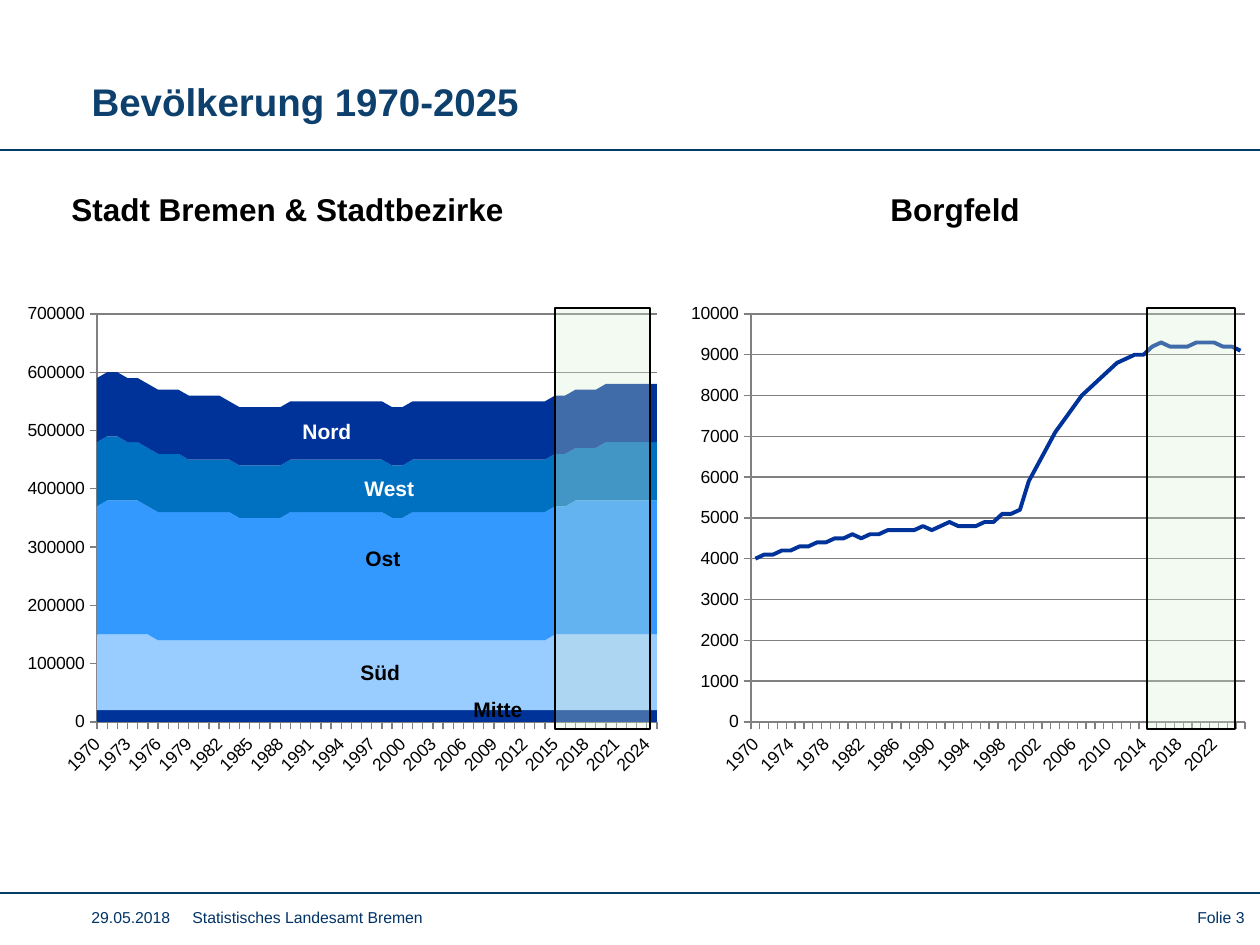
from lxml import etree
from pptx import Presentation
from pptx.chart.data import CategoryChartData
from pptx.dml.color import RGBColor
from pptx.enum.chart import XL_CHART_TYPE, XL_TICK_MARK
from pptx.enum.shapes import MSO_CONNECTOR, MSO_SHAPE
from pptx.enum.text import MSO_ANCHOR, PP_ALIGN
from pptx.oxml.ns import qn
from pptx.util import Pt

AREA, LINE = XL_CHART_TYPE.AREA_STACKED, XL_CHART_TYPE.LINE
TICK_OUT = XL_TICK_MARK.OUTSIDE
STRAIGHT, RECT = MSO_CONNECTOR.STRAIGHT, MSO_SHAPE.RECTANGLE
MIDDLE, LEFT, RIGHT = MSO_ANCHOR.MIDDLE, PP_ALIGN.LEFT, PP_ALIGN.RIGHT

SCALE = 914400 / 126  # EMU per px
FONT = "Arial"
COLORS = {
    "title": "0D406D", "rule": "003D66", "footer": "003366",
    "black": "000000", "white": "FFFFFF", "grid": "808080",
    "navy": "003399", "blue": "0070C0", "sky": "3399FF", "pale": "99CCFF",
    "forecast": "D8F0D2",
}
YEARS = [str(y) for y in range(1970, 2026)]

# Districts from bottom to top: colour, (thousand inhabitants, number of years)
DISTRICTS = [
    ("Mitte", "navy", [(20, 56)]),
    ("Süd", "pale", [(130, 6), (120, 39), (130, 11)]),
    ("Ost", "sky", [(220, 1), (230, 4), (220, 9), (210, 5), (220, 10),
                    (210, 2), (220, 16), (230, 9)]),
    ("West", "blue", [(110, 3), (100, 6), (90, 41), (100, 6)]),
    ("Nord", "navy", [(110, 13), (100, 43)]),
]
# Borgfeld, in hundreds of inhabitants
BORGFELD = [
    40, 41, 41, 42, 42, 43, 43, 44, 44, 45, 45, 46, 45, 46, 46, 47, 47, 47, 47,
    48, 47, 48, 49, 48, 48, 48, 49, 49, 51, 51, 52, 59, 63, 67, 71, 74, 77, 80,
    82, 84, 86, 88, 89, 90, 90, 92, 93, 92, 92, 92, 93, 93, 93, 92, 92, 91,
]
# District labels: text, left, top, colour
LABELS = [
    ("Nord", 290, 412, "white"), ("West", 352, 469, "white"),
    ("Ost", 353, 539, "black"), ("Süd", 348, 653, "black"),
    ("Mitte", 461, 690, "black"),
]


def px(n):
    return round(n * SCALE)


def rgb(name):
    return RGBColor.from_string(COLORS[name])


def set_font(font, size, color, bold=False):
    font.name, font.size, font.bold = FONT, Pt(size), bold
    font.color.rgb = rgb(color)


def add_run(p, text, size, color, bold=False):
    r = p.add_run()
    r.text = text
    set_font(r.font, size, color, bold)


def add_title(s, text):
    sp = s.shapes.title
    sp.left, sp.top, sp.width, sp.height = map(px, (79, 55, 997, 92))
    tf = sp.text_frame
    tf.vertical_anchor = MIDDLE
    p = tf.paragraphs[0]
    p.alignment = LEFT
    add_run(p, text, 22, "title", True)


def add_text(s, box, text, size, color, bold=False, align=LEFT, wrap=True):
    tf = s.shapes.add_textbox(*map(px, box)).text_frame
    tf.word_wrap = wrap
    p = tf.paragraphs[0]
    p.alignment = align
    add_run(p, text, size, color, bold)
    return p


def add_tab_stop(p, pos):
    tabs = etree.SubElement(p._p.get_or_add_pPr(), qn("a:tabLst"))
    etree.SubElement(tabs, qn("a:tab"), pos=str(px(pos)), algn="l")


def add_rule(s, y):
    c = s.shapes.add_connector(STRAIGHT, 0, px(y), px(1260), px(y))
    c.line.color.rgb = rgb("rule")
    c.line.width = Pt(1)
    etree.SubElement(c._element.spPr, qn("a:effectLst"))


def add_forecast(s, x, w):
    sp = s.shapes.add_shape(RECT, px(x), px(308), px(w), px(421))
    sp.shadow.inherit = False
    sp.fill.solid()
    sp.fill.fore_color.rgb = rgb("forecast")
    color = sp._element.spPr.find(".//" + qn("a:srgbClr"))
    etree.SubElement(color, qn("a:alpha"), val="30000")
    sp.line.color.rgb = rgb("black")
    sp.line.width = Pt(0.75)


def set_plot_area(chart, box, plot):
    """Fix the inner plot area, given in slide px, inside the chart box."""
    area = chart._chartSpace.chart.plotArea
    for old in area.findall(qn("c:layout")):
        area.remove(old)
    layout = etree.Element(qn("c:layout"))
    area.insert(0, layout)
    manual = etree.SubElement(layout, qn("c:manualLayout"))
    values = [("layoutTarget", "inner"), ("xMode", "edge"), ("yMode", "edge"),
              ("x", (plot[0] - box[0]) / box[2]),
              ("y", (plot[1] - box[1]) / box[3]),
              ("w", plot[2] / box[2]), ("h", plot[3] / box[3])]
    for tag, val in values:
        etree.SubElement(manual, qn("c:" + tag), val=str(val))


def insert_before(axis, anchor, tag, val):
    """Set an axis option, placed ahead of the anchor element."""
    for old in axis._element.findall(qn(tag)):
        axis._element.remove(old)
    new = etree.Element(qn(tag), val=str(val))
    axis._element.find(qn(anchor)).addprevious(new)


def format_axes(chart, top, step, skip, crossing):
    cat, val = chart.category_axis, chart.value_axis
    for axis in (cat, val):
        axis.major_tick_mark = TICK_OUT
        axis.format.line.color.rgb = rgb("grid")
        set_font(axis.tick_labels.font, 10, "black")
    val.minimum_scale, val.maximum_scale, val.major_unit = 0, top, step
    val.has_major_gridlines = True
    val.major_gridlines.format.line.color.rgb = rgb("grid")
    val.tick_labels.number_format = "0"
    val.tick_labels.number_format_is_linked = False
    insert_before(val, "c:majorUnit", "c:crossBetween", crossing)
    # Slanted year labels, one every few years
    cat.has_major_gridlines = False
    body = cat._element.find(qn("c:txPr")).find(qn("a:bodyPr"))
    body.set("rot", "-2700000")
    body.set("vert", "horz")
    insert_before(cat, "c:noMultiLvlLbl", "c:tickLblSkip", skip)
    insert_before(cat, "c:noMultiLvlLbl", "c:tickMarkSkip", 1)


def add_population_chart(s, kind, box, plot, series, top, step, skip, crossing):
    data = CategoryChartData()
    data.categories = YEARS
    for name, _, values in series:
        data.add_series(name, values)
    chart = s.shapes.add_chart(kind, *map(px, box), data).chart
    chart.has_legend = chart.has_title = False
    set_font(chart.font, 10, "black")
    chart.plots[0].vary_by_categories = False
    for ser, (_, color, _) in zip(chart.plots[0].series, series):
        if kind == LINE:
            ser.smooth = False
            ser.format.line.color.rgb = rgb(color)
            ser.format.line.width = Pt(2.25)
        else:
            ser.format.fill.solid()
            ser.format.fill.fore_color.rgb = rgb(color)
    format_axes(chart, top, step, skip, crossing)
    set_plot_area(chart, box, plot)


def main():
    prs = Presentation()
    prs.slide_width, prs.slide_height = px(1260), px(945)
    s = prs.slides.add_slide(prs.slide_layouts[5])

    # Header and footer
    add_title(s, "Bevölkerung 1970-2025")
    for y in (150, 893):
        add_rule(s, y)
    p = add_text(s, (79, 902, 764, 35),
                 "29.05.2018\tStatistisches Landesamt Bremen", 9, "footer")
    add_tab_stop(p, 101)
    add_text(s, (1147, 902, 110, 35), "Folie 3", 9, "footer", align=RIGHT)

    # Chart headings
    add_text(s, (59, 184, 556, 50), "Stadt Bremen & Stadtbezirke", 18, "black", True)
    add_text(s, (878, 184, 156, 50), "Borgfeld", 18, "black", True, wrap=False)

    # Charts
    districts = [(name, color, [v * 1000 for v, n in runs for _ in range(n)])
                 for name, color, runs in DISTRICTS]
    add_population_chart(s, AREA, (15, 294, 655, 491), (97, 314, 560, 408),
                         districts, 700000, 100000, 3, "midCat")
    borgfeld = [("Borgfeld", "navy", [v * 100 for v in BORGFELD])]
    add_population_chart(s, LINE, (679, 295, 577, 490), (751, 314, 494, 408),
                         borgfeld, 10000, 1000, 4, "between")

    # District labels and forecast years
    for text, x, y, color in LABELS:
        add_text(s, (x, y, 94, 38), text, 12, color, True)
    for x, w in ((555, 95), (1147, 88)):
        add_forecast(s, x, w)

    prs.save("out.pptx")


if __name__ == "__main__":
    main()
